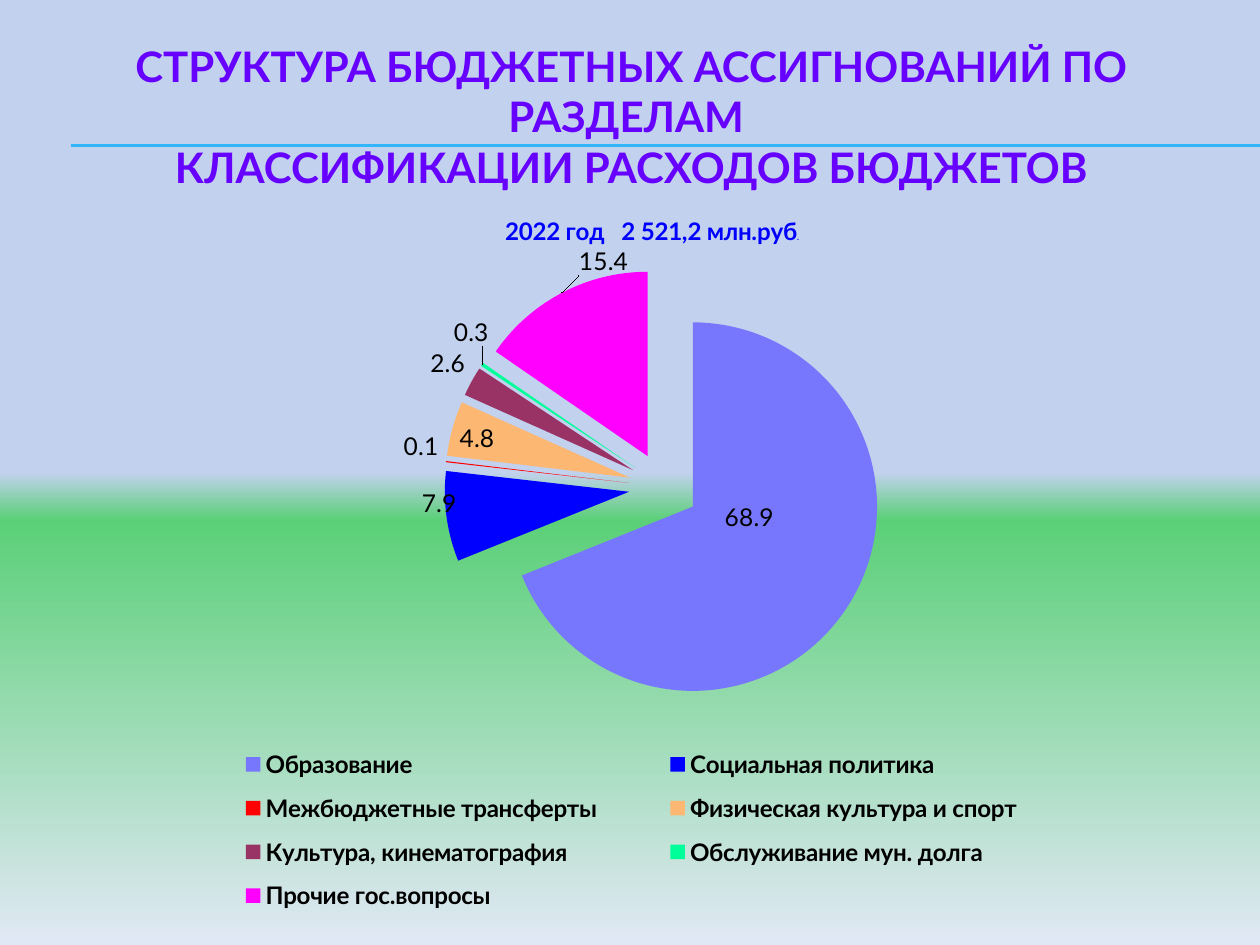
from dataclasses import dataclass
from typing import Optional

import lxml.etree
import pptx
import pptx.chart.data
import pptx.dml.color
import pptx.enum.chart
import pptx.enum.shapes
import pptx.enum.text
import pptx.oxml
import pptx.oxml.ns
import pptx.util
from pptx.util import Inches, Pt

FONT = "Lato"
POSITION = pptx.enum.chart.XL_LABEL_POSITION
qn = pptx.oxml.ns.qn


@dataclass
class Sector:
    name: str
    share: float
    color: str
    label_position: POSITION = POSITION.OUTSIDE_END
    label_shift: Optional[tuple[float, float]] = None  # percent of the chart


SECTORS = [
    Sector("Образование", 68.9, "7777FD", POSITION.CENTER, (-1.7, -5.6)),
    Sector("Социальная политика", 7.9, "0000FF", label_shift=(1.5, -4)),
    Sector("Межбюджетные трансферты", 0.1, "FF0000"),
    Sector("Физическая культура и спорт", 4.8, "FCB772",
           POSITION.INSIDE_END, (0, -1.1)),
    Sector("Культура, кинематография", 2.6, "993366"),
    Sector("Обслуживание мун. долга", 0.3, "00FF99", label_shift=(1.1, -1.8)),
    Sector("Прочие гос.вопросы", 15.4, "FF00FF", label_shift=(6, -1.5)),
]


def rgb(color: str) -> pptx.dml.color.RGBColor:
    return pptx.dml.color.RGBColor.from_string(color)


def style_font(font, size: float, color: str, bold: bool = False) -> None:
    font.name = FONT
    font.size = Pt(size)
    font.bold = bold
    font.color.rgb = rgb(color)


def paint_background(slide, stops: list[tuple[int, str]]) -> None:
    fill = slide.background.fill
    fill.gradient()
    fill.gradient_angle = 270
    stop_list = slide.background._cSld.find(".//" + qn("a:gsLst"))
    stop_list.clear()
    for percent, color in stops:
        stop = lxml.etree.SubElement(stop_list, qn("a:gs"), pos=str(percent * 1000))
        lxml.etree.SubElement(stop, qn("a:srgbClr"), val=color)


def add_rule(slide, y: float) -> None:
    rule = slide.shapes.add_connector(
        pptx.enum.shapes.MSO_CONNECTOR.STRAIGHT,
        Inches(0.56), Inches(y), Inches(10), Inches(y))
    rule.line.color.rgb = rgb("31B6FD")
    rule.line.width = Pt(0.75)
    lxml.etree.SubElement(rule._element.spPr, qn("a:effectLst"))


def set_layout(parent, after: Optional[str], modes: dict[str, str],
               **percents: float) -> None:
    """Give a chart part a manual layout, placed after the named child."""
    for old in parent.findall(qn("c:layout")):
        parent.remove(old)
    layout = pptx.oxml.parse_xml(f"<c:layout {pptx.oxml.ns.nsdecls('c')}/>")
    manual = lxml.etree.SubElement(layout, qn("c:manualLayout"))
    for key, mode in modes.items():
        lxml.etree.SubElement(manual, qn("c:" + key), val=mode)
    for key, percent in percents.items():
        lxml.etree.SubElement(manual, qn("c:" + key), val=f"{percent / 100:.3f}")
    if after:
        parent.find(qn(after)).addnext(layout)
    else:
        parent.insert(0, layout)


def style_sector(point, sector: Sector) -> None:
    point.format.fill.solid()
    point.format.fill.fore_color.rgb = rgb(sector.color)
    point.format.line.fill.background()
    label = point.data_label
    style_font(label.font, 14, "000000")
    label.position = sector.label_position
    if sector.label_shift:
        x, y = sector.label_shift
        set_layout(label._get_or_add_dLbl(), "c:idx", {}, x=x, y=y)


def add_heading(slide) -> None:
    box = slide.shapes.add_textbox(Inches(0.51), Inches(0.28), Inches(9), Inches(1.28))
    frame = box.text_frame
    frame.word_wrap = True
    frame.vertical_anchor = pptx.enum.text.MSO_ANCHOR.MIDDLE
    heading = frame.paragraphs[0]
    heading.alignment = pptx.enum.text.PP_ALIGN.CENTER
    lines = ("СТРУКТУРА БЮДЖЕТНЫХ АССИГНОВАНИЙ ПО РАЗДЕЛАМ ",
             "КЛАССИФИКАЦИИ РАСХОДОВ БЮДЖЕТОВ")
    for number, line in enumerate(lines):
        if number:
            heading.add_line_break()
        run = heading.add_run()
        run.text = line
        style_font(run.font, 24, "6600FF", bold=True)


def add_budget_pie(slide) -> None:
    data = pptx.chart.data.CategoryChartData()
    data.categories = [sector.name for sector in SECTORS]
    data.add_series("Series 1", [sector.share for sector in SECTORS])
    chart = slide.shapes.add_chart(
        pptx.enum.chart.XL_CHART_TYPE.PIE,
        Inches(0.57), Inches(1.62), Inches(9.24), Inches(5.88), data).chart
    style_font(chart.font, 5.8, "000000")
    from_edge = {"xMode": "edge", "yMode": "edge"}

    # Chart title
    chart.has_title = True
    caption = chart.chart_title.text_frame.paragraphs[0]
    for text, size, bold in (("2022 год   2 521,2 млн.руб", 13.8, True),
                             (".", 5.8, False)):
        run = caption.add_run()
        run.text = text
        style_font(run.font, size, "0000FF", bold)
    set_layout(chart.chart_title._element, "c:tx", from_edge, x=36.9, y=0.9)

    # Exploded sectors with their labels
    plot = chart.plots[0]
    plot.vary_by_categories = True
    set_layout(chart._chartSpace.find(".//" + qn("c:plotArea")), None,
               {"layoutTarget": "inner", **from_edge},
               x=9.4, y=8.6, w=82.9, h=59.2)
    series = plot.series[0]
    labels = series.data_labels
    labels.show_value = True
    style_font(labels.font, 14, "000000")
    for index, sector in enumerate(SECTORS):
        style_sector(series.points[index], sector)
    leader_lines = labels._element.find(qn("c:showLeaderLines"))
    if leader_lines is None:
        leader_lines = lxml.etree.SubElement(labels._element, qn("c:showLeaderLines"))
    leader_lines.set("val", "1")
    explosion = pptx.oxml.parse_xml(
        f'<c:explosion {pptx.oxml.ns.nsdecls("c")} val="19"/>')
    series._element.find(qn("c:dPt")).addprevious(explosion)

    # Legend in two columns under the pie
    chart.has_legend = True
    legend = chart.legend
    legend.position = pptx.enum.chart.XL_LEGEND_POSITION.RIGHT
    legend.include_in_layout = False
    style_font(legend.font, 13.8, "000000", bold=True)
    set_layout(legend._element, "c:legendPos", from_edge,
               x=9.3, y=71.7, w=77.5, h=25.6)


def main() -> None:
    deck = pptx.Presentation()
    deck.slide_width, deck.slide_height = Inches(10), Inches(7.5)
    slide = deck.slides.add_slide(deck.slide_layouts[6])
    paint_background(slide, [(50, "C2D1ED"), (55, "5BD078"), (100, "E1E8F5")])
    for y in (1.15, 1.16):
        add_rule(slide, y)
    add_heading(slide)
    add_budget_pie(slide)
    deck.save("out.pptx")


if __name__ == "__main__":
    main()
